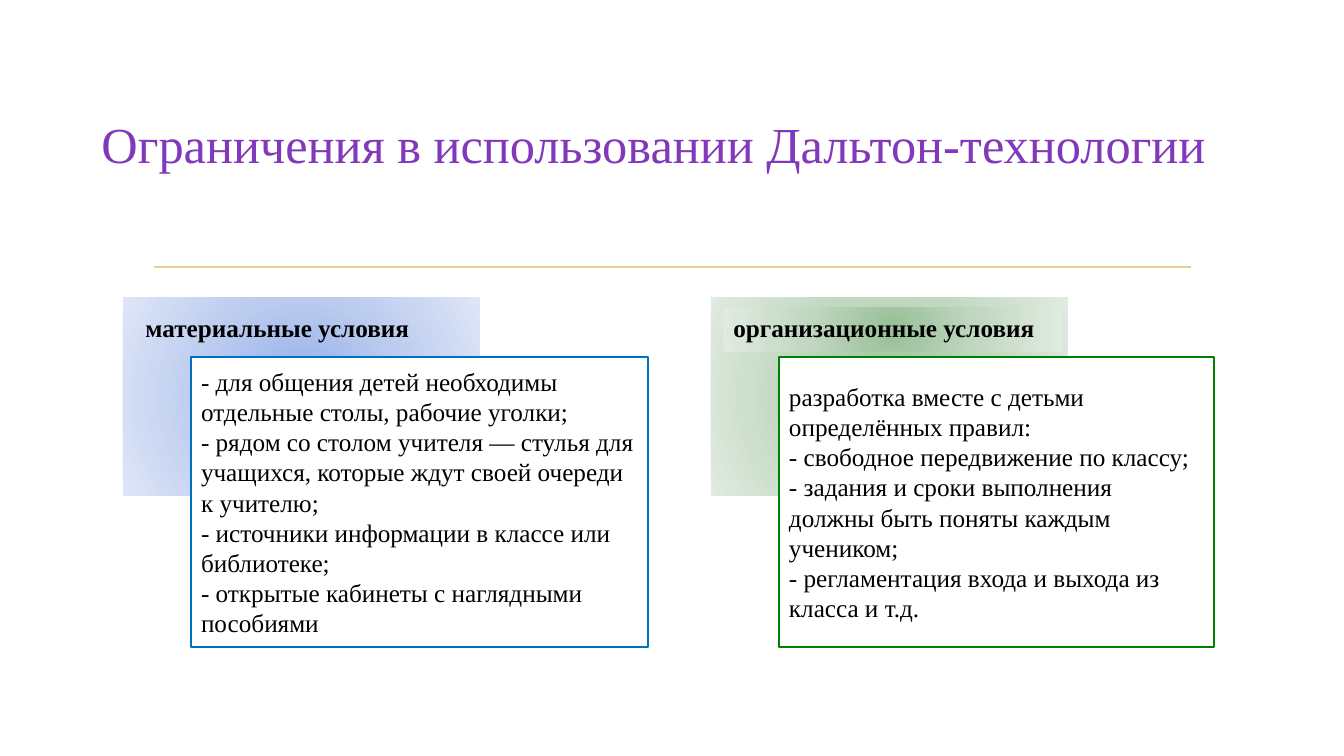
from lxml import etree
from pptx import Presentation
from pptx.dml.color import RGBColor
from pptx.enum.shapes import MSO_CONNECTOR, MSO_SHAPE
from pptx.enum.text import MSO_ANCHOR, MSO_AUTO_SIZE, PP_ALIGN
from pptx.oxml import parse_xml
from pptx.oxml.ns import nsdecls, qn
from pptx.util import Pt

PX = 9525  # EMU in one px, 96 px to the inch
FONT = "Times New Roman"
PURPLE = RGBColor(0x82, 0x38, 0xBA)
GOLD = RGBColor(0xE8, 0xD1, 0x91)
BLUE = RGBColor(0x00, 0x70, 0xC0)
GREEN = RGBColor(0x00, 0x80, 0x00)
BLACK = RGBColor(0, 0, 0)
WHITE = RGBColor(0xFF, 0xFF, 0xFF)
BLUE_STOPS = (RGBColor(0x8F, 0xAD, 0xE9), RGBColor(0xBC, 0xCC, 0xEF), RGBColor(0xDE, 0xE6, 0xF7))
GREEN_STOPS = (RGBColor(0x98, 0xC0, 0x98), RGBColor(0xC1, 0xD7, 0xC1), RGBColor(0xE1, 0xEB, 0xE1))


def fill_radial(sp, colors):
    """Fill a shape with a circular gradient, from its centre outwards."""
    stops = "".join(
        f'<a:gs pos="{i * 50000}"><a:srgbClr val="{color}"/></a:gs>'
        for i, color in enumerate(colors))
    sp.fill.background()
    spPr = sp._element.spPr
    spPr.replace(spPr.find(qn("a:noFill")), parse_xml(
        f'<a:gradFill {nsdecls("a")} rotWithShape="1"><a:gsLst>{stops}</a:gsLst>'
        '<a:path path="circle"><a:fillToRect l="50000" t="50000" r="50000" b="50000"/></a:path>'
        '</a:gradFill>'))


def write(tf, lines, size, color, align=PP_ALIGN.LEFT, bold=False):
    for i, line in enumerate(lines):
        p = tf.paragraphs[0] if i == 0 else tf.add_paragraph()
        p.text = line
        p.alignment = align
        p.font.name = FONT
        p.font.size = Pt(size)
        p.font.bold = bold
        p.font.color.rgb = color


prs = Presentation()
prs.slide_width, prs.slide_height = 1280 * PX, 720 * PX
slide = prs.slides.add_slide(prs.slide_layouts[6])

# Divider under the title
divider = slide.shapes.add_connector(
    MSO_CONNECTOR.STRAIGHT, 147 * PX, 254 * PX, 1134 * PX, 254 * PX)
divider.line.color.rgb = GOLD
divider.line.width = Pt(1.25)
etree.SubElement(divider._element.spPr, qn("a:effectLst"))

# Title
title = slide.shapes.add_textbox(43 * PX, 57 * PX, 1171 * PX, 159 * PX)
tf = title.text_frame
tf.word_wrap = True
tf.vertical_anchor = MSO_ANCHOR.MIDDLE
write(tf, ["Ограничения в использовании Дальтон-технологии "], 36, PURPLE, PP_ALIGN.CENTER)

# Two columns: heading, label width, label gradient, box width, line colour, panel gradient, text
columns = [
    ("материальные условия", 286, None, 435, BLUE, BLUE_STOPS, [
        "- для общения детей необходимы отдельные столы, рабочие уголки;",
        "- рядом со столом учителя — стулья для учащихся, которые ждут своей очереди к учителю;",
        "- источники информации в классе или библиотеке;",
        "- открытые кабинеты с наглядными пособиями",
    ]),
    ("организационные условия", 322, GREEN_STOPS, 414, GREEN, GREEN_STOPS, [
        "разработка вместе с детьми определённых правил:",
        "- свободное передвижение по классу;",
        "- задания и сроки выполнения должны быть поняты каждым учеником;",
        "- регламентация входа и выхода из класса и т.д.",
    ]),
]
for i, (heading, label_w, label_stops, box_w, color, stops, lines) in enumerate(columns):
    left = 117 + 560 * i

    # Gradient panel with its heading
    group = slide.shapes.add_group_shape()
    panel = group.shapes.add_shape(
        MSO_SHAPE.RECTANGLE, left * PX, 283 * PX, 340 * PX, 189 * PX)
    panel.shadow.inherit = False
    fill_radial(panel, stops)
    panel.line.fill.background()
    label = group.shapes.add_textbox((left + 12) * PX, 293 * PX, label_w * PX, 42 * PX)
    if label_stops:
        fill_radial(label, label_stops)
    tf = label.text_frame
    tf.word_wrap = False
    tf.auto_size = MSO_AUTO_SIZE.SHAPE_TO_FIT_TEXT
    write(tf, [heading], 18, BLACK, bold=True)

    # Framed text
    box = slide.shapes.add_shape(
        MSO_SHAPE.RECTANGLE, (left + 65) * PX, 340 * PX, box_w * PX, 276 * PX)
    box.shadow.inherit = False
    box.fill.solid()
    box.fill.fore_color.rgb = WHITE
    box.line.color.rgb = color
    box.line.width = Pt(1.25)
    tf = box.text_frame
    tf.word_wrap = True
    tf.vertical_anchor = MSO_ANCHOR.MIDDLE
    write(tf, lines, 18, BLACK)

prs.save("out.pptx")
